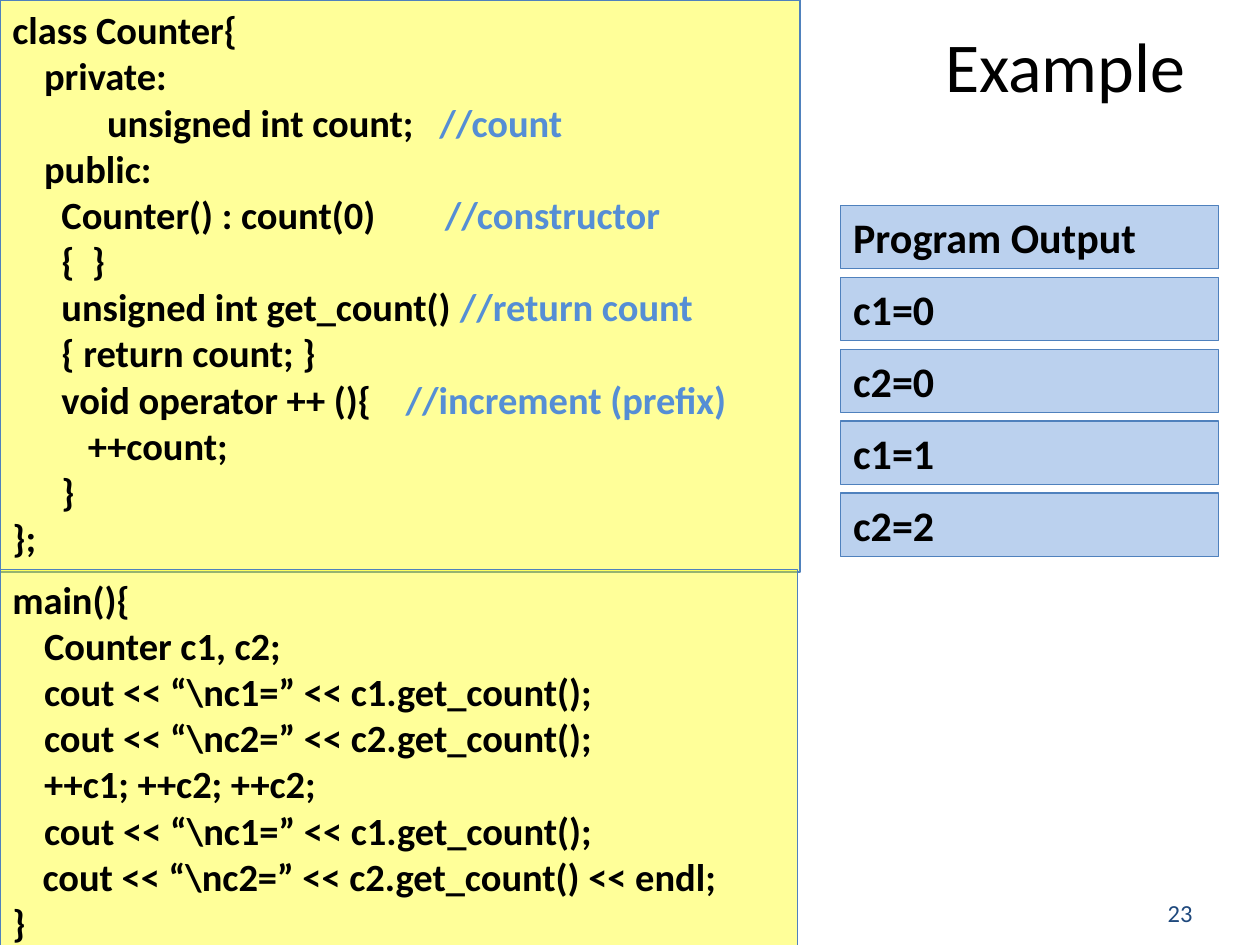
from lxml import etree
from pptx import Presentation
from pptx import util as u
from pptx.dml.color import RGBColor
from pptx.enum import shapes, text
from pptx.oxml.ns import qn

COLORS = {"black": "000000", "comment": "558ED5", "code": "FFFF00",
          "output": "558ED5", "outline": "4F81BD", "number": "1F497D"}

# Indents and comment stops are in centimetres from the text edge.
LEVEL, MEMBER, INNER, FIELD = 0.64, 0.99, 1.52, 1.91
CLASS_CODE = [
    (0, "class Counter{"),
    (LEVEL, "private:"),
    (FIELD, "unsigned int count;", "//count", 8.61),
    (LEVEL, "public:"),
    (MEMBER, "Counter() : count(0)", "//constructor", 8.72),
    (MEMBER, "{  }"),
    (MEMBER, "unsigned int get_count()", "//return count", 9.02),
    (MEMBER, "{ return count; }"),
    (MEMBER, "void operator ++ (){", "//increment (prefix)", 7.93),
    (INNER, "++count;"),
    (MEMBER, "}"),
    (0, "};"),
]
MAIN_CODE = [
    (0, "main(){"),
    (LEVEL, "Counter c1, c2;"),
    (LEVEL, "cout << “\\nc1=” << c1.get_count();"),
    (LEVEL, "cout << “\\nc2=” << c2.get_count();"),
    (LEVEL, "++c1; ++c2; ++c2;"),
    (LEVEL, "cout << “\\nc1=” << c1.get_count();"),
    (0.61, "cout << “\\nc2=” << c2.get_count() << endl;"),
    (0, "}"),
]
OUTPUT = ["Program Output", "c1=0", "c2=0", "c1=1", "c2=2"]


def add_span(para, words, size, color, bold=True):
    span = para.add_run()
    span.text = words
    values = {"name": "Calibri", "size": u.Pt(size), "bold": bold}
    for name, value in values.items():
        setattr(span.font, name, value)
    span.font.color.rgb = RGBColor.from_string(COLORS[color])


def add_panel(page, place, fill, size, lines):
    """Add a translucent box; commented lines use tab stops for both columns."""
    box = page.shapes.add_shape(shapes.MSO_SHAPE.RECTANGLE, *map(u.Cm, place))
    box.shadow.inherit = False
    box.fill.solid()
    box.fill.fore_color.rgb = RGBColor.from_string(COLORS[fill])
    color = box.fill._xPr.find(qn("a:solidFill"))[0]
    etree.SubElement(color, qn("a:alpha"), val="40000")
    box.line.color.rgb = RGBColor.from_string(COLORS["outline"])
    box.line.width = u.Pt(0.75)
    frame = box.text_frame
    values = {"word_wrap": True, "vertical_anchor": text.MSO_ANCHOR.TOP,
              "auto_size": text.MSO_AUTO_SIZE.SHAPE_TO_FIT_TEXT}
    for name, value in values.items():
        setattr(frame, name, value)
    for index, (indent, code, *comment) in enumerate(lines):
        para = frame.add_paragraph() if index else frame.paragraphs[0]
        para.alignment = text.PP_ALIGN.LEFT
        props = para._p.get_or_add_pPr()
        if comment:
            note, stop = comment
            tabs = etree.SubElement(props, qn("a:tabLst"))
            for position in (indent, stop):
                etree.SubElement(tabs, qn("a:tab"), pos=str(u.Cm(position)), algn="l")
            add_span(para, f"\t{code}\t", size, "black")
            add_span(para, note, size, "comment")
        else:
            props.set("marL", str(u.Cm(indent)))
            add_span(para, code, size, "black")


deck = Presentation()
deck.slide_width, deck.slide_height = u.Cm(25.4), u.Cm(19.05)
page = deck.slides.add_slide(deck.slide_layouts[5])

title = page.shapes.title
title_place = {"left": 17.98, "top": 0.2, "width": 6.99, "height": 2.21}
for name, value in title_place.items():
    setattr(title, name, u.Cm(value))
title.text_frame.vertical_anchor = text.MSO_ANCHOR.MIDDLE
heading = title.text_frame.paragraphs[0]
heading.alignment = text.PP_ALIGN.CENTER
add_span(heading, "Example", 40, "black", bold=False)

add_panel(page, (0, 0, 16.13, 11.53), "code", 22, CLASS_CODE)
add_panel(page, (0, 11.48, 16.08, 7.77), "code", 22, MAIN_CODE)
for row, words in enumerate(OUTPUT):
    add_panel(page, (16.95, 4.14 + 1.45 * row, 7.62, 1.28), "output", 24, [(0, words)])

number = page.shapes.add_textbox(u.Cm(23.29), u.Cm(17.98), u.Cm(1.7), u.Cm(0.84))
number.text_frame.word_wrap = True
number.text_frame.vertical_anchor = text.MSO_ANCHOR.MIDDLE
add_span(number.text_frame.paragraphs[0], "23", 14, "number", bold=False)

deck.save("out.pptx")
